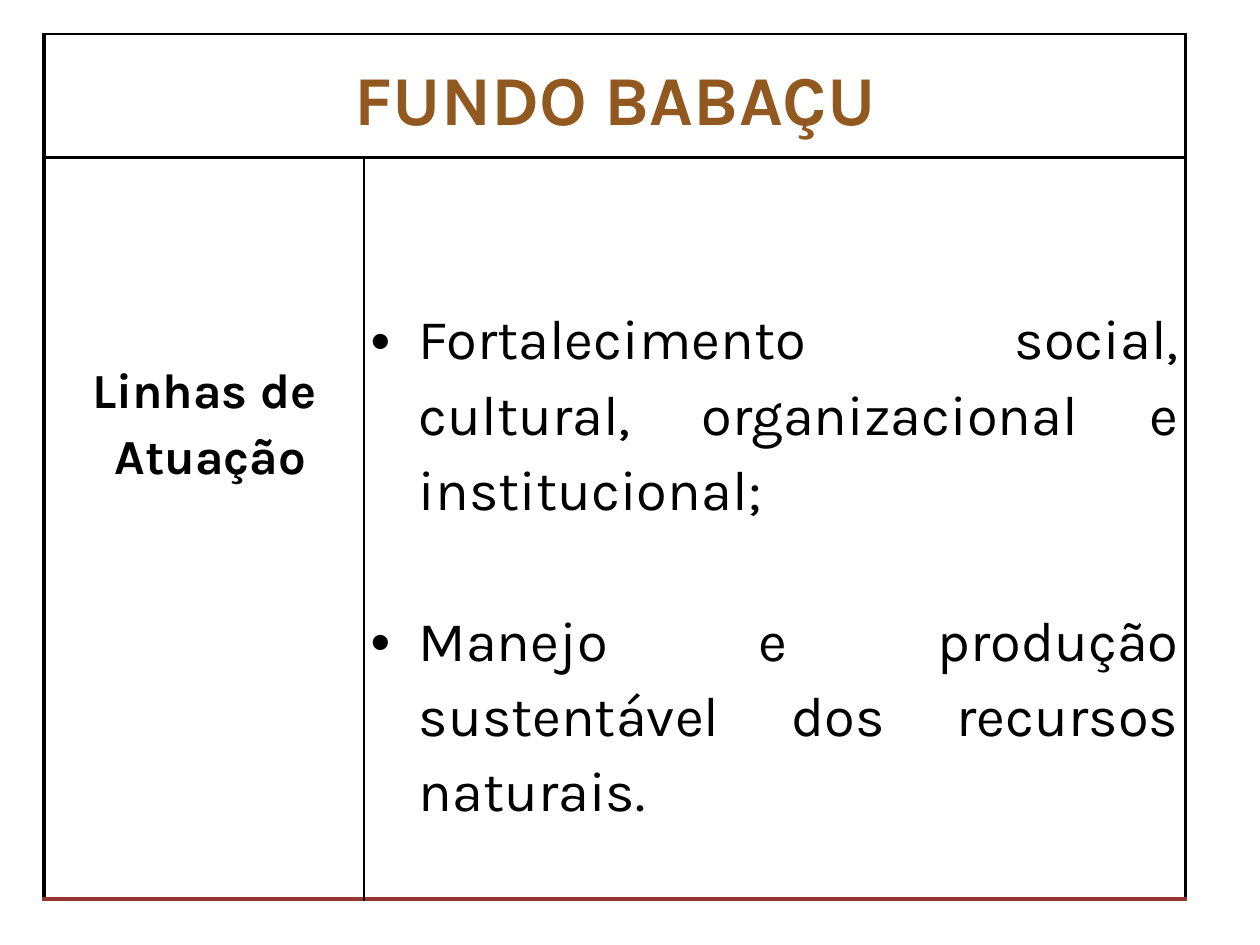
from dataclasses import dataclass

from lxml.etree import SubElement
from pptx import Presentation
from pptx.dml.color import RGBColor
from pptx.enum.text import MSO_ANCHOR, PP_ALIGN
from pptx.oxml import parse_xml
from pptx.oxml.ns import nsdecls, qn
from pptx.slide import Slide
from pptx.util import Cm, Pt

COLORS = {"text": "000000", "title": "91581F", "rule": "000000", "base": "943634"}
THIN, THICK = 1, 2.25


def write_text(frame, paragraphs, font="Karla", size=32, color="text", bold=False,
               align=PP_ALIGN.CENTER, indent=0, bullet=False, gap=0):
    for index, text in enumerate(paragraphs):
        para = frame.paragraphs[0] if index == 0 else frame.add_paragraph()
        para.alignment = align
        para.line_spacing = 1.15
        para.space_before = Pt(gap if index else 0)
        properties = para._p.get_or_add_pPr()
        properties.set("marL", str(Cm(indent)))
        properties.set("indent", str(-Cm(indent)))
        if bullet:
            SubElement(properties, qn("a:buFont")).set("typeface", "Arial")
            SubElement(properties, qn("a:buChar")).set("char", "•")
        span = para.add_run()
        span.text = text
        span.font.name = font
        span.font.size = Pt(size)
        span.font.bold = bold
        span.font.color.rgb = RGBColor.from_string(COLORS[color])


@dataclass
class SlideBuilder:
    page: Slide
    side_margin: float = 0.13

    def table(self, left, top, widths, heights):
        frame = self.page.shapes.add_table(
            len(heights), len(widths), Cm(left), Cm(top),
            Cm(sum(widths)), Cm(sum(heights)))
        table = frame.table
        table.first_row = table.horz_banding = False
        for column, width in zip(table.columns, widths):
            column.width = Cm(width)
        for row, height in zip(table.rows, heights):
            row.height = Cm(height)
        return table

    def borders(self, cell, **sides):
        """Set borders, given as L, R, T, B = (points, colour name)."""
        properties = cell._tc.get_or_add_tcPr()
        for position, side in enumerate(side for side in "LRTB" if side in sides):
            points, color = sides[side]
            properties.insert(position, parse_xml(
                f'<a:ln{side} {nsdecls("a")} w="{Pt(points)}"><a:solidFill>'
                f'<a:srgbClr val="{COLORS[color]}"/></a:solidFill></a:ln{side}>'))

    def cell(self, cell, paragraphs, top_margin=0, anchor=MSO_ANCHOR.TOP, **style):
        cell.fill.background()
        cell.margin_left = cell.margin_right = Cm(self.side_margin)
        cell.margin_top, cell.margin_bottom = Cm(top_margin), 0
        cell.vertical_anchor = anchor
        write_text(cell.text_frame, paragraphs, **style)


def main():
    deck = Presentation()
    deck.slide_width, deck.slide_height = Cm(25.4), Cm(19.05)
    builder = SlideBuilder(deck.slides.add_slide(deck.slide_layouts[6]))

    table = builder.table(0.89, 0.69, widths=[6.45, 16.56], heights=[2.49, 14.94])
    header, header_end = table.cell(0, 0), table.cell(0, 1)
    label, items = table.cell(1, 0), table.cell(1, 1)
    header.merge(header_end)

    builder.cell(header, ["FUNDO BABAÇU"], anchor=MSO_ANCHOR.MIDDLE,
                 size=40, color="title", bold=True)
    builder.cell(label, ["Linhas de Atuação"], top_margin=3.98,
                 size=28, bold=True, indent=0.25)
    builder.cell(items, [
        "Fortalecimento social, cultural, organizacional e institucional;",
        "Manejo e produção sustentável dos recursos naturais.",
    ], top_margin=2.84, align=PP_ALIGN.JUSTIFY, indent=0.97, bullet=True, gap=43)

    thin, thick, base = (THIN, "rule"), (THICK, "rule"), (THICK, "base")
    for part in (header, header_end):
        builder.borders(part, L=thick, R=thick, T=thin, B=thick)
    builder.borders(label, L=thick, R=thin, T=thick, B=base)
    builder.borders(items, L=thin, R=thick, T=thick, B=base)

    deck.save("out.pptx")


if __name__ == "__main__":
    main()
